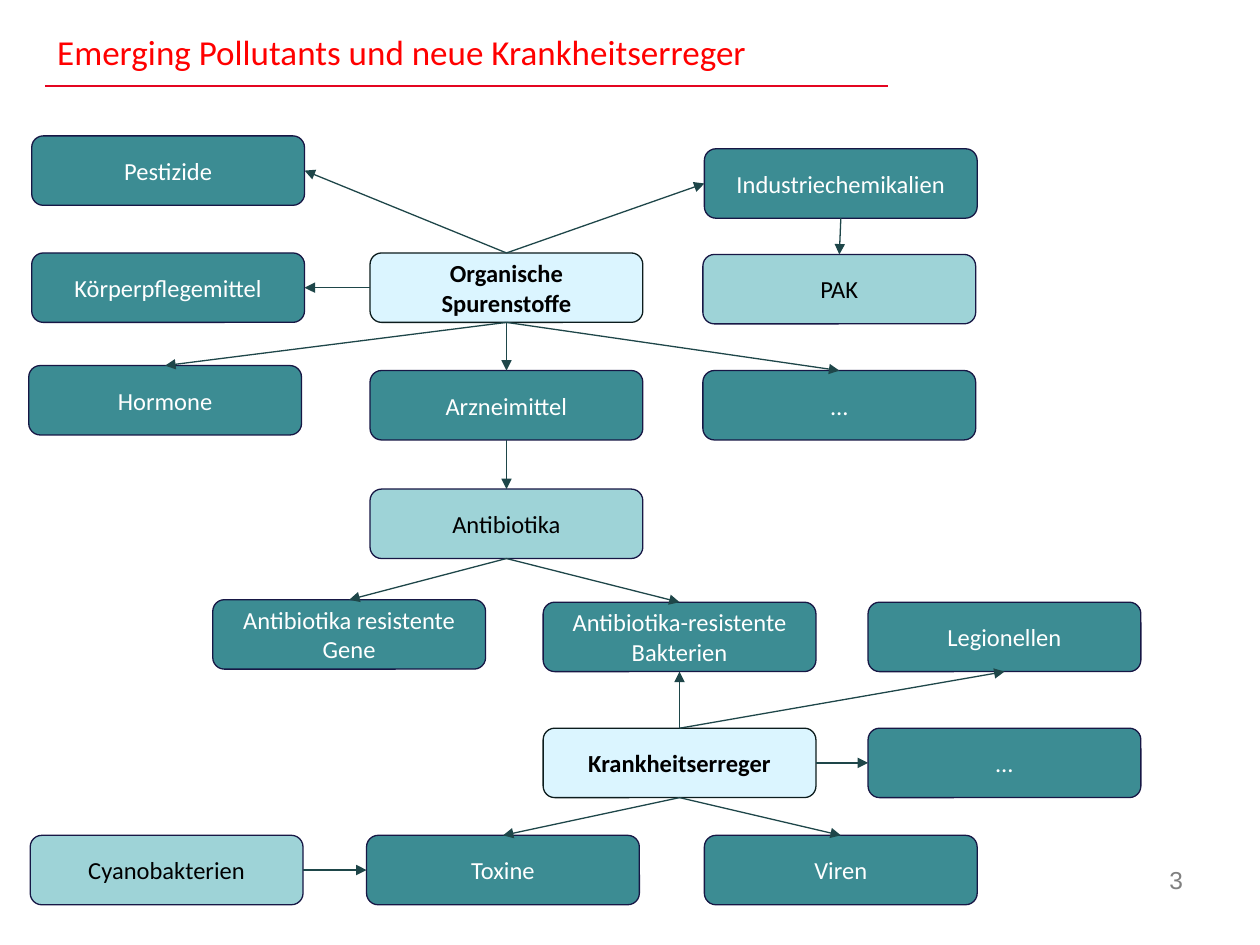
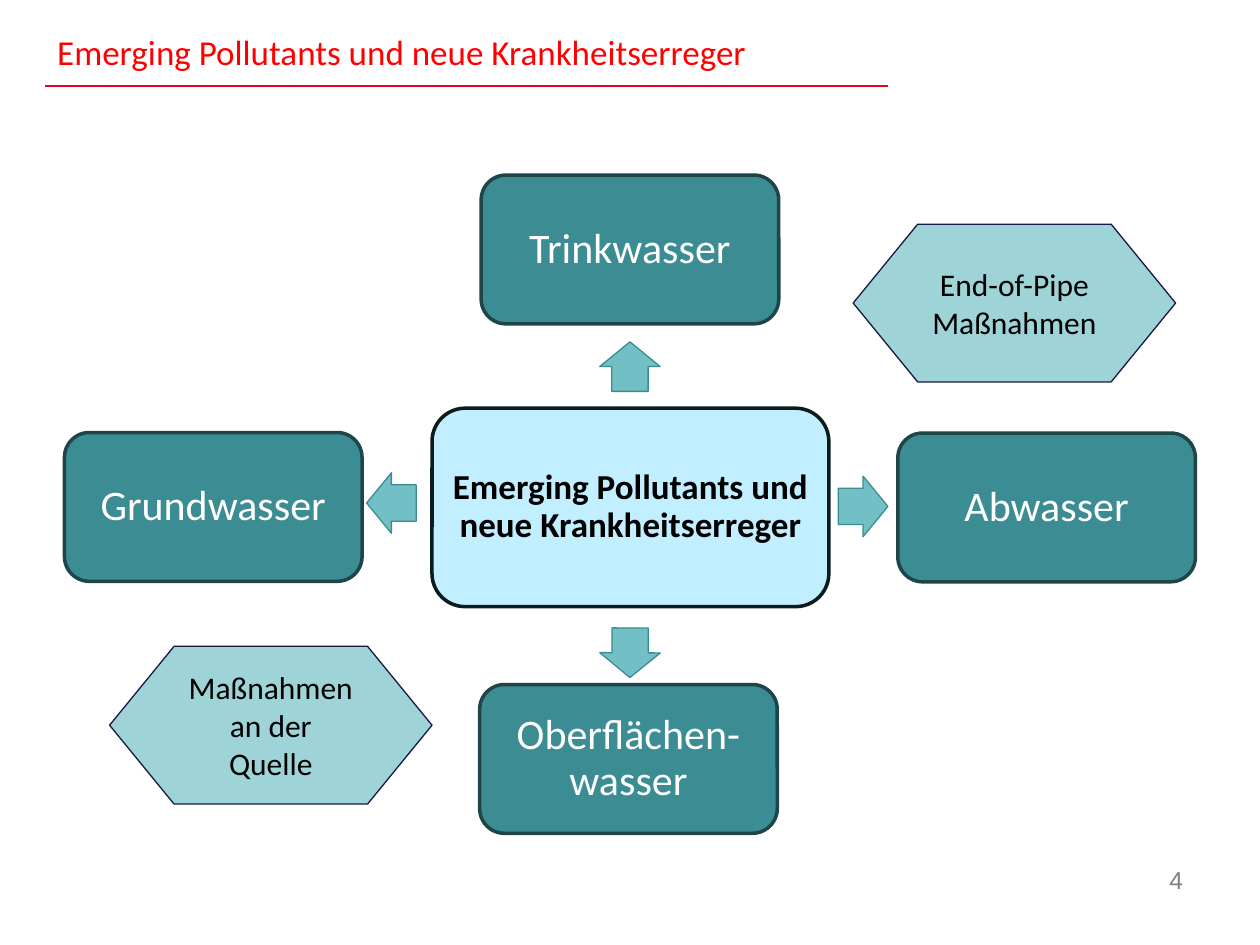
"""Build two slides on emerging pollutants and new pathogens."""
from dataclasses import dataclass

from lxml import etree
from pptx import Presentation
from pptx.dml.color import RGBColor
from pptx.enum.shapes import MSO_CONNECTOR, MSO_SHAPE
from pptx.enum.text import MSO_ANCHOR, PP_ALIGN
from pptx.oxml.ns import qn
from pptx.util import Cm, Pt

STRAIGHT = MSO_CONNECTOR.STRAIGHT
ROUNDED = MSO_SHAPE.ROUNDED_RECTANGLE
HEXAGON = MSO_SHAPE.FLOWCHART_PREPARATION
ARROW = MSO_SHAPE.RIGHT_ARROW
MIDDLE = MSO_ANCHOR.MIDDLE
LEFT, CENTER, RIGHT = PP_ALIGN.LEFT, PP_ALIGN.CENTER, PP_ALIGN.RIGHT
TOP_SIDE, LEFT_SIDE, BOTTOM_SIDE, RIGHT_SIDE = range(4)
TITLE_ONLY = 5


@dataclass(frozen=True)
class Theme:
    """Colours, fonts and sizes shared by the slides."""
    title: str = "FF0000"
    rule: str = "E40520"
    number: str = "808080"
    teal: str = "3C8C93"
    pale_teal: str = "9ED3D7"
    arrow: str = "72BFC5"
    pale_blue: str = "C1EFFF"
    navy: str = "171745"
    ink: str = "0C1C1D"
    dark_teal: str = "1E4649"
    black: str = "000000"
    white: str = "FFFFFF"
    text_font: str = "Calibri"
    number_font: str = "Arial"
    title_size: int = 20
    node_size: int = 14
    measure_size: int = 18
    water_size: int = 24
    thin: float = 0.75
    rule_width: float = 1.5
    thick: float = 2


THEME = Theme()
TITLE = "Emerging Pollutants und neue Krankheitserreger"
NODE_SIZE = (5.5, 1.4)
NODE_STYLES = {
    "group": dict(fill=THEME.teal, line=THEME.navy, ink=THEME.white),
    "example": dict(fill=THEME.pale_teal, line=THEME.navy, ink=THEME.black),
    "hub": dict(fill=THEME.pale_blue, line=THEME.ink, ink=THEME.black, bold=True, opacity=58),
}
NODES = {
    "pesticides": ("Pestizide", 0.64, 2.74, "group"),
    "care": ("Körperpflegemittel", 0.64, 5.1, "group"),
    "hormones": ("Hormone", 0.58, 7.37, "group"),
    "organics": ("Organische Spurenstoffe", 7.46, 5.1, "hub"),
    "industry": ("Industriechemikalien", 14.2, 3, "group"),
    "pak": ("PAK", 14.17, 5.13, "example"),
    "drugs": ("Arzneimittel", 7.46, 7.47, "group"),
    "more_organics": ("…", 14.17, 7.47, "group"),
    "antibiotics": ("Antibiotika", 7.46, 9.86, "example"),
    "genes": ("Antibiotika resistente Gene", 4.29, 12.09, "group"),
    "bacteria": ("Antibiotika-resistente Bakterien", 10.95, 12.14, "group"),
    "legionella": ("Legionellen", 17.5, 12.14, "group"),
    "pathogens": ("Krankheitserreger", 10.95, 14.68, "hub"),
    "more_pathogens": ("…", 17.5, 14.68, "group"),
    "cyanobacteria": ("Cyanobakterien", 0.61, 16.84, "example"),
    "toxins": ("Toxine", 7.39, 16.84, "group"),
    "viruses": ("Viren", 14.2, 16.84, "group"),
}
LINKS = [
    ("organics", TOP_SIDE, "pesticides", RIGHT_SIDE),
    ("organics", TOP_SIDE, "industry", LEFT_SIDE),
    ("organics", LEFT_SIDE, "care", RIGHT_SIDE),
    ("organics", BOTTOM_SIDE, "hormones", TOP_SIDE),
    ("organics", BOTTOM_SIDE, "drugs", TOP_SIDE),
    ("organics", BOTTOM_SIDE, "more_organics", TOP_SIDE),
    ("industry", BOTTOM_SIDE, "pak", TOP_SIDE),
    ("drugs", BOTTOM_SIDE, "antibiotics", TOP_SIDE),
    ("antibiotics", BOTTOM_SIDE, "genes", TOP_SIDE),
    ("antibiotics", BOTTOM_SIDE, "bacteria", TOP_SIDE),
    ("pathogens", TOP_SIDE, "bacteria", BOTTOM_SIDE),
    ("pathogens", TOP_SIDE, "legionella", BOTTOM_SIDE),
    ("pathogens", RIGHT_SIDE, "more_pathogens", LEFT_SIDE),
    ("pathogens", BOTTOM_SIDE, "toxins", TOP_SIDE),
    ("pathogens", BOTTOM_SIDE, "viruses", TOP_SIDE),
    ("cyanobacteria", RIGHT_SIDE, "toxins", LEFT_SIDE),
]
WATERS = [
    ("Trinkwasser", 9.7, 3.53),
    ("Abwasser", 18.1, 8.73),
    ("Oberflächen-wasser", 9.67, 13.8),
    ("Grundwasser", 1.3, 8.72),
]
WATER_ARROWS = [(12.2, 6.78, 270), (16.9, 9.6, 0), (12.2, 12.55, 90.3), (7.39, 9.53, 180)]
MEASURES = [("Maßnahmen an der Quelle", 2.21, 13.03), ("End-of-Pipe Maßnahmen", 17.2, 4.52)]


def apply_format(target, values):
    """Set each named attribute of the target."""
    for name, value in values.items():
        setattr(target, name, value)


def write_text(shape, text, size, ink, align=CENTER, font=THEME.text_font, bold=False, spacing=None):
    """Put one formatted paragraph into a shape."""
    shape.text_frame.word_wrap = True
    para = shape.text_frame.paragraphs[0]
    span = para.add_run()
    span.text = text
    apply_format(para, {"alignment": align, "line_spacing": spacing})
    apply_format(span.font, {"name": font, "size": Pt(size), "bold": bold})
    span.font.color.rgb = RGBColor.from_string(ink)


def place(shape, left, top, width, height):
    """Move and size a shape in centimetres."""
    bounds = {"left": left, "top": top, "width": width, "height": height}
    apply_format(shape, {name: Cm(value) for name, value in bounds.items()})


def draw_line(line, colour, width):
    """Give a line its colour and width."""
    line.color.rgb = RGBColor.from_string(colour)
    line.width = Pt(width)


def add_box(page, kind, bounds, fill, line, width=THEME.thin, opacity=None):
    """Add a filled and outlined preset shape."""
    box = page.shapes.add_shape(kind, *map(Cm, bounds))
    box.shadow.inherit = False
    box.fill.solid()
    box.fill.fore_color.rgb = RGBColor.from_string(fill)
    draw_line(box.line, line, width)
    box.text_frame.vertical_anchor = MIDDLE
    if opacity:
        colour = box.fill._xPr.find(".//" + qn("a:srgbClr"))
        etree.SubElement(colour, qn("a:alpha"), val=str(opacity * 1000))
    return box


def add_line(page, colour, width, ends=(0, 0, 0, 0)):
    """Add a straight line without a shadow."""
    line = page.shapes.add_connector(STRAIGHT, *map(Cm, ends))
    draw_line(line.line, colour, width)
    etree.SubElement(line._element.spPr, qn("a:effectLst"))
    return line


def add_link(page, source, source_side, target, target_side):
    """Join two boxes with an arrow."""
    link = add_line(page, THEME.dark_teal, THEME.thin)
    link.begin_connect(source, source_side)
    link.end_connect(target, target_side)
    etree.SubElement(link.line._get_or_add_ln(), qn("a:tailEnd"), type="triangle")


def add_node(page, text, left, top, style):
    """Add one labelled box of the overview."""
    look = dict(NODE_STYLES[style])
    ink, bold = look.pop("ink"), look.pop("bold", False)
    node = add_box(page, ROUNDED, (left, top, *NODE_SIZE), **look)
    write_text(node, text, THEME.node_size, ink, bold=bold)
    return node


def add_water(page, text, bounds, fill, line, size, ink, bold=False):
    """Add one thick-edged box of the water cycle."""
    box = add_box(page, ROUNDED, bounds, fill, line, THEME.thick)
    sides = ("left", "right", "top", "bottom")
    apply_format(box.text_frame, {f"margin_{side}": Cm(0.08) for side in sides})
    write_text(box, text, size, ink, bold=bold, spacing=0.9)


def add_page(deck, number):
    """Add a slide with its title, rule and number."""
    page = deck.slides.add_slide(deck.slide_layouts[TITLE_ONLY])
    add_line(page, THEME.rule, THEME.rule_width, (17.9, 1.73, 0.9, 1.73))
    title = page.shapes.title
    place(title, 0.9, 0.33, 17.2, 1.4)
    title.text_frame.vertical_anchor = MIDDLE
    write_text(title, TITLE, THEME.title_size, THEME.title, LEFT)
    box = page.shapes.add_textbox(*map(Cm, (22.3, 17.32, 1.8, 1.4)))
    write_text(box, str(number), THEME.node_size, THEME.number, RIGHT, THEME.number_font)
    return page


def build_overview(page):
    """Fill the page with pollutant groups and their links."""
    nodes = {key: add_node(page, *node) for key, node in NODES.items()}
    for source, source_side, target, target_side in LINKS:
        add_link(page, nodes[source], source_side, nodes[target], target_side)


def build_water_cycle(page):
    """Fill the page with the affected waters and the measures."""
    add_water(page, TITLE, (8.71, 8.23, 8, 4), THEME.pale_blue, THEME.ink,
              THEME.title_size, THEME.black, bold=True)
    for text, left, top in WATERS:
        add_water(page, text, (left, top, 6, 3), THEME.teal, THEME.dark_teal,
                  THEME.water_size, THEME.white)
    for left, top, angle in WATER_ARROWS:
        arrow = add_box(page, ARROW, (left, top, 1, 1.22), THEME.arrow, THEME.teal)
        arrow.rotation = angle
        arrow.adjustments[0] = 0.6
    for text, left, top in MEASURES:
        box = add_box(page, HEXAGON, (left, top, 6.5, 3.18), THEME.pale_teal, THEME.navy)
        write_text(box, text, THEME.measure_size, THEME.black)


def main():
    """Build and save the deck."""
    deck = Presentation()
    apply_format(deck, {"slide_width": Cm(25.4), "slide_height": Cm(19.05)})
    for number, build in enumerate((build_overview, build_water_cycle), start=3):
        build(add_page(deck, number))
    deck.save("out.pptx")


if __name__ == "__main__":
    main()
